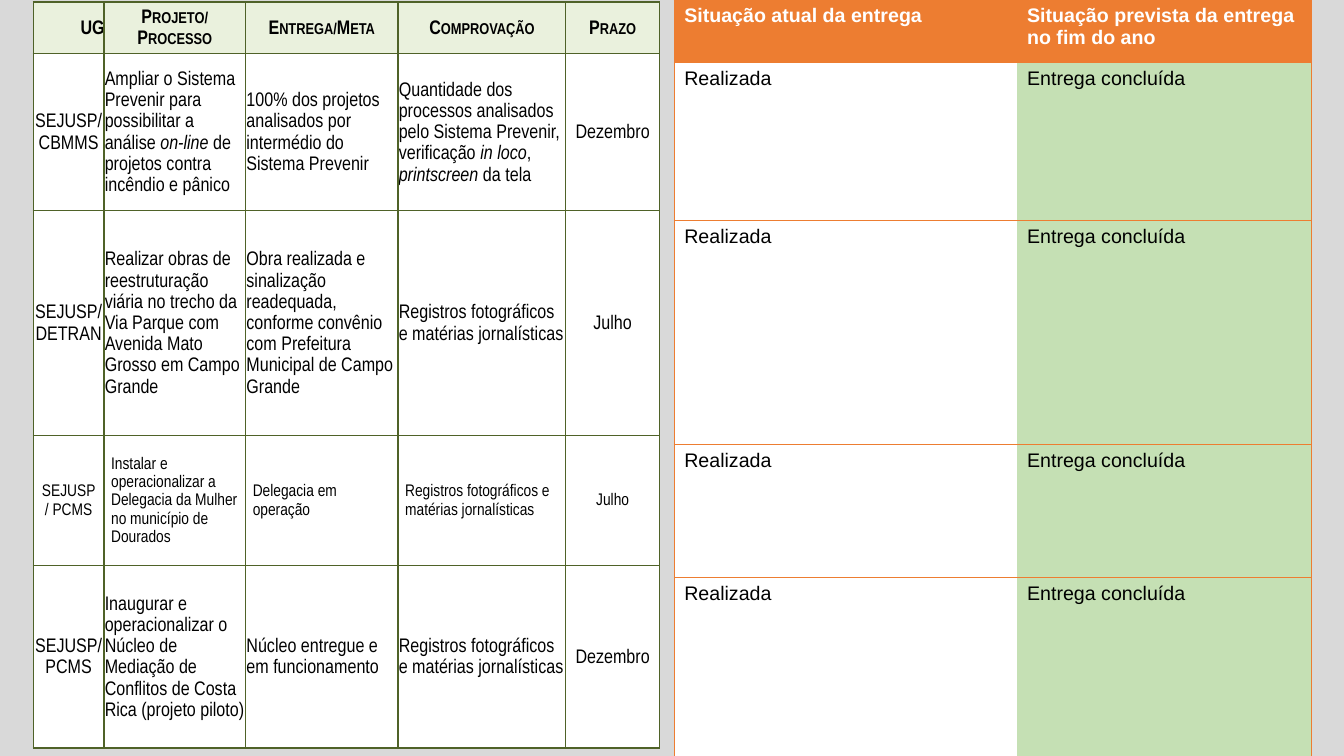
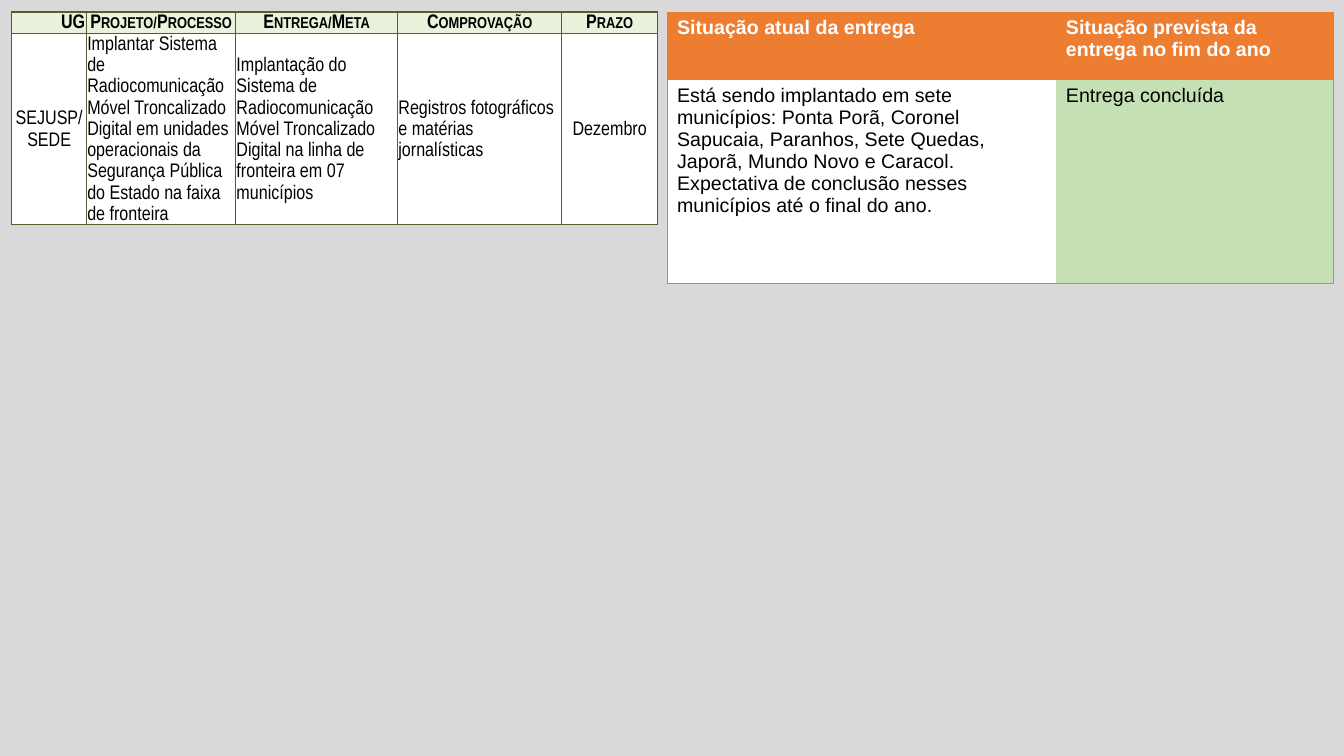
from dataclasses import dataclass

from lxml import etree
from pptx import Presentation
from pptx import util as u
from pptx.dml.color import RGBColor
from pptx.enum import shapes, text
from pptx.oxml import ns

GREY = RGBColor(0xD9, 0xD9, 0xD9)
OLIVE = RGBColor(0x4F, 0x62, 0x28)
PALE_GREEN = RGBColor(0xEA, 0xF1, 0xDD)
ORANGE = RGBColor(0xED, 0x7D, 0x31)
DONE_GREEN = RGBColor(0xC5, 0xE0, 0xB4)
WHITE = RGBColor(0xFF, 0xFF, 0xFF)
BLACK = RGBColor(0x00, 0x00, 0x00)

PLAN_HEADER = ("UG", "Projeto/Processo", "Entrega/Meta", "Comprovação", "Prazo")
STATUS_HEADER = ("Situação atual da entrega",
                 "Situação prevista da entrega no fim do ano")
CENTRED_COLUMNS = (0, 4)
PHOTO_RECORDS = "Registros fotográficos e matérias jornalísticas"
CONCLUDED = "Entrega concluída"


@dataclass(frozen=True)
class TextStyle:
    font: str
    size: float
    color: RGBColor = BLACK
    bold: bool = False
    small_caps: bool = False
    spacing: float | None = None


@dataclass(frozen=True)
class Grid:
    left: float
    top: float
    columns: tuple[float, ...]
    rows: tuple[float, ...]


@dataclass(frozen=True)
class Delivery:
    unit: str
    project: str
    goal: str
    evidence: str
    deadline: str
    current: str = "Realizada"
    forecast: str = CONCLUDED
    compact: bool = False

    def plan(self) -> tuple[str, ...]:
        return self.unit, self.project, self.goal, self.evidence, self.deadline


@dataclass(frozen=True)
class Page:
    plan_grid: Grid
    status_grid: Grid
    deliveries: tuple[Delivery, ...]


PLAN_HEAD = TextStyle("Arial Narrow", 14, bold=True, small_caps=True, spacing=1.15)
PLAN_BODY = TextStyle("Arial Narrow", 14, spacing=1.15)
PLAN_COMPACT = TextStyle("Arial Narrow", 12, spacing=1.15)
STATUS_HEAD = TextStyle("Arial", 14, WHITE, bold=True)
STATUS_BODY = TextStyle("Arial", 14)

PAGES = (
    Page(
        Grid(0.84, 0.05, (1.78, 3.57, 3.84, 4.23, 2.36), (1.3, 3.96, 5.66, 3.28, 4.6)),
        Grid(16.99, 0, (8.64, 7.42), (1.57, 3.99, 5.64, 3.35, 4.55)),
        (
            Delivery(
                "SEJUSP/\nCBMMS",
                "Ampliar o Sistema Prevenir para possibilitar a análise _on-line_ "
                "de projetos contra incêndio e pânico",
                "100% dos projetos analisados por intermédio do Sistema Prevenir",
                "Quantidade dos processos analisados pelo Sistema Prevenir, "
                "verificação _in loco_, _printscreen_ da tela",
                "Dezembro"),
            Delivery(
                "SEJUSP/ DETRAN",
                "Realizar obras de reestruturação viária no trecho da Via Parque "
                "com Avenida Mato Grosso em Campo Grande",
                "Obra realizada e sinalização readequada, conforme convênio "
                "com Prefeitura Municipal de Campo Grande",
                PHOTO_RECORDS, "Julho"),
            Delivery(
                "SEJUSP / PCMS",
                "Instalar e operacionalizar a Delegacia da Mulher no município de Dourados",
                "Delegacia em operação",
                PHOTO_RECORDS, "Julho", compact=True),
            Delivery(
                "SEJUSP/\nPCMS",
                "Inaugurar e operacionalizar o Núcleo de Mediação de Conflitos "
                "de Costa Rica (projeto piloto)",
                "Núcleo entregue e em funcionamento",
                PHOTO_RECORDS, "Dezembro"),
        ),
    ),
    Page(
        Grid(0.3, 0.3, (1.88, 3.76, 4.08, 4.14, 2.41), (0.53, 4.83)),
        Grid(16.81, 0.3, (9.8, 7), (1.7, 5.15)),
        (
            Delivery(
                "SEJUSP/\nSEDE",
                "Implantar Sistema de Radiocomunicação Móvel Troncalizado Digital em "
                "unidades operacionais da Segurança Pública do Estado na faixa de fronteira",
                "Implantação do Sistema de Radiocomunicação Móvel Troncalizado Digital "
                "na linha de fronteira em 07 municípios",
                PHOTO_RECORDS, "Dezembro",
                "Está sendo implantado em sete municípios: Ponta Porã, Coronel Sapucaia, "
                "Paranhos, Sete Quedas, Japorã, Mundo Novo e Caracol. Expectativa de "
                "conclusão nesses municípios até o final do ano."),
        ),
    ),
)


def add_backdrop(slide, width, height) -> None:
    backdrop = slide.shapes.add_shape(shapes.MSO_SHAPE.RECTANGLE, 0, 0, width, height)
    backdrop.shadow.inherit = False
    backdrop.fill.solid()
    backdrop.fill.fore_color.rgb = GREY
    backdrop.line.color.rgb = GREY
    backdrop.line.width = u.Pt(1)


def add_grid(slide, grid: Grid):
    table = slide.shapes.add_table(
        len(grid.rows), len(grid.columns), u.Cm(grid.left), u.Cm(grid.top),
        u.Cm(sum(grid.columns)), u.Cm(sum(grid.rows))).table
    table.first_row = table.horz_banding = False
    for column, width in zip(table.columns, grid.columns):
        column.width = u.Cm(width)
    for row, height in zip(table.rows, grid.rows):
        row.height = u.Cm(height)
    return table


def set_borders(cell, color: RGBColor, points: float, sides: str) -> None:
    properties = cell._tc.get_or_add_tcPr()
    for side in "LRTB":
        border = etree.SubElement(properties, ns.qn(f"a:ln{side}"), w=str(u.Pt(points)))
        if side in sides:
            solid = etree.SubElement(border, ns.qn("a:solidFill"))
            etree.SubElement(solid, ns.qn("a:srgbClr"), val=str(color))
        else:
            etree.SubElement(border, ns.qn("a:noFill"))


def set_fill(cell, color: RGBColor) -> None:
    cell.fill.solid()
    cell.fill.fore_color.rgb = color


def write(cell, content: str, style: TextStyle, align=text.PP_ALIGN.LEFT) -> None:
    frame = cell.text_frame
    for index, line in enumerate(content.split("\n")):
        paragraph = frame.add_paragraph() if index else frame.paragraphs[0]
        paragraph.alignment = align
        if style.spacing:
            paragraph.line_spacing = style.spacing
        for position, piece in enumerate(line.split("_")):
            if not piece:
                continue
            run = paragraph.add_run()
            run.text = piece
            run.font.name = style.font
            run.font.size = u.Pt(style.size)
            run.font.color.rgb = style.color
            run.font.bold = style.bold
            run.font.italic = position % 2 == 1
            if style.small_caps:
                run.font._element.set("cap", "small")


def add_plan(slide, page: Page) -> None:
    table = add_grid(slide, page.plan_grid)
    rows = [(PLAN_HEADER, PLAN_HEAD, PALE_GREEN, 0.02)]
    for delivery in page.deliveries:
        style, margin = (PLAN_COMPACT, 0.18) if delivery.compact else (PLAN_BODY, 0.02)
        rows.append((delivery.plan(), style, WHITE, margin))
    for r, (contents, style, fill, margin) in enumerate(rows):
        for c, content in enumerate(contents):
            cell = table.cell(r, c)
            centred = r == 0 or c in CENTRED_COLUMNS
            set_borders(cell, OLIVE, 1, "LRTB")
            set_fill(cell, fill)
            cell.vertical_anchor = text.MSO_ANCHOR.MIDDLE
            cell.margin_left = cell.margin_right = u.Cm(margin)
            cell.margin_top = cell.margin_bottom = 0
            write(cell, content, style,
                  text.PP_ALIGN.CENTER if centred else text.PP_ALIGN.LEFT)
    table.cell(0, 0).margin_left = u.Cm(0.62)


def add_status(slide, page: Page) -> None:
    table = add_grid(slide, page.status_grid)
    rows = [(STATUS_HEADER, STATUS_HEAD, (ORANGE, ORANGE))]
    rows += [((delivery.current, delivery.forecast), STATUS_BODY, (WHITE, DONE_GREEN))
             for delivery in page.deliveries]
    for r, (contents, style, fills) in enumerate(rows):
        for c, (content, fill, outer_side) in enumerate(zip(contents, fills, "LR")):
            cell = table.cell(r, c)
            set_borders(cell, ORANGE, 0.5, outer_side + "TB")
            set_fill(cell, fill)
            write(cell, content, style)


def main() -> None:
    deck = Presentation()
    deck.slide_width, deck.slide_height = u.Cm(33.87), u.Cm(19.05)
    for page in PAGES:
        slide = deck.slides.add_slide(deck.slide_layouts[6])
        add_backdrop(slide, deck.slide_width, deck.slide_height)
        add_plan(slide, page)
        add_status(slide, page)
    deck.save("out.pptx")


if __name__ == "__main__":
    main()
